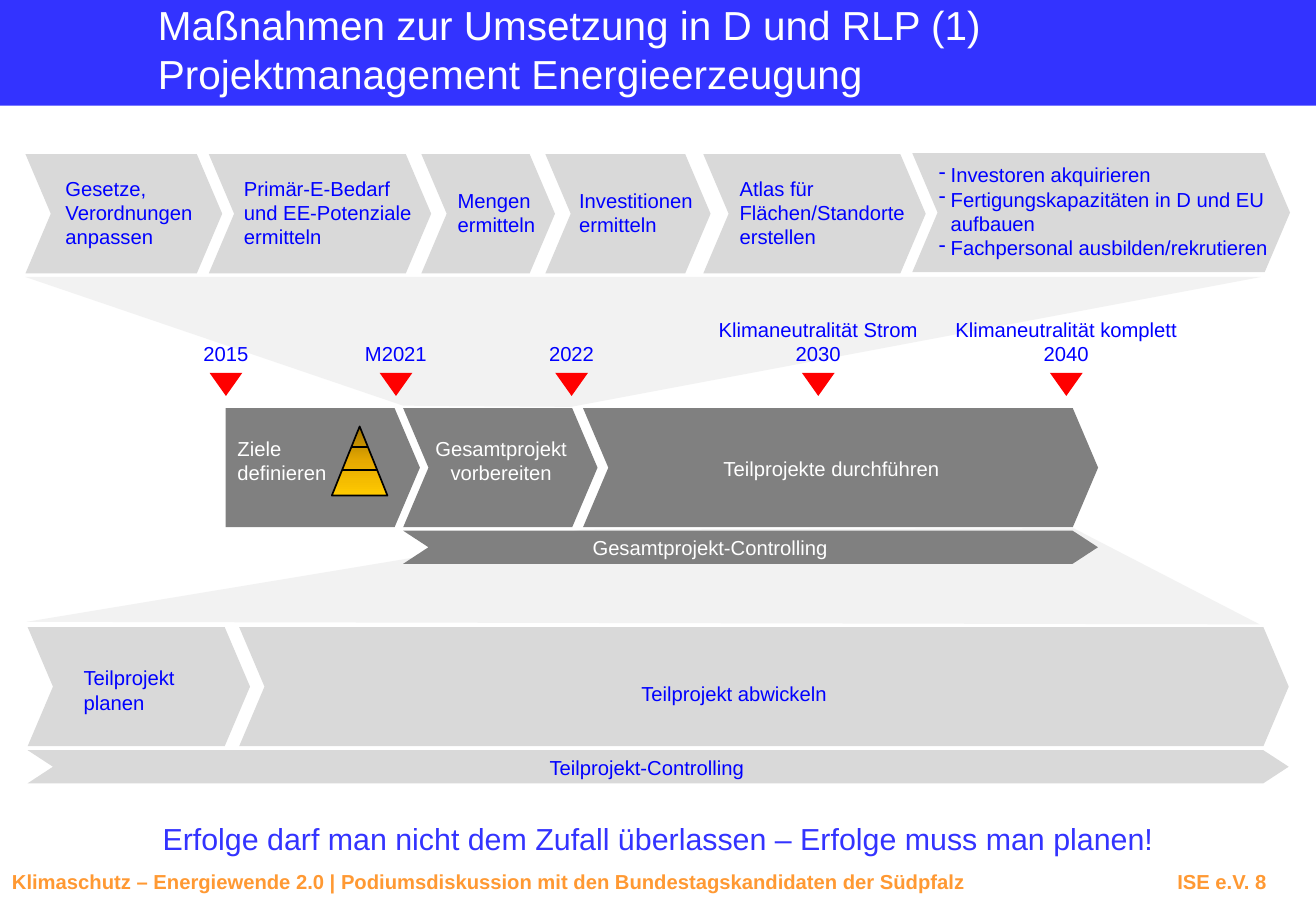
from copy import deepcopy

from lxml import etree
from pptx import Presentation
from pptx.dml.color import RGBColor
from pptx.enum.shapes import MSO_CONNECTOR, MSO_SHAPE
from pptx.enum.text import MSO_ANCHOR, MSO_AUTO_SIZE, PP_ALIGN
from pptx.oxml.ns import qn
from pptx.util import Pt

CHEVRON = MSO_SHAPE.CHEVRON
PENTAGON = MSO_SHAPE.PENTAGON
TRIANGLE = MSO_SHAPE.ISOSCELES_TRIANGLE
LEFT = PP_ALIGN.LEFT
CENTER = PP_ALIGN.CENTER

COLORS = {
    "band": "3333FF", "footer": "FF9933", "funnel": "F2F2F2",
    "light": "D9D9D9", "dark": "808080", "blue": "0000FF",
    "white": "FFFFFF", "marker": "FF0000", "black": "000000",
    "pyramid_top": "A07400", "pyramid_middle": "E6A900", "pyramid_base": "FFCA00",
}
PHASE_HEIGHT = 70.6
BAR_HEIGHT = 19.6

PREPARATION = [
    (15.1, 116.6, 31.7, 92.2, "Gesetze,\nVerordnungen\nanpassen"),
    (123.8, 131.8, 137.5, 114.5, "Primär-E-Bedarf\nund EE-Potenziale\nermitteln"),
    (249.8, 79.2, 264.2, 61.2, "Mengen\nermitteln"),
    (323.3, 97.9, 336.2, 82.1, "Investitionen\nermitteln"),
    (416.9, 131.8, 431.3, 112.3, "Atlas für\nFlächen/Standorte\nerstellen"),
]
RESOURCES = [
    "Investoren akquirieren",
    "Fertigungskapazitäten in D und EU\vaufbauen",
    "Fachpersonal ausbilden/rekrutieren",
]
MILESTONES = [
    (133.9, "2015"),
    (234.7, "M2021"),
    (338.8, "2022"),
    (485, "Klimaneutralität Strom\n2030"),
    (632, "Klimaneutralität komplett\n2040"),
]


def color(name):
    return RGBColor.from_string(COLORS[name])


def label_height(text):
    return 14.4 * len(text.splitlines()) + 7.2


def paint(shape, fill):
    shape.shadow.inherit = False
    shape.fill.solid()
    shape.fill.fore_color.rgb = color(fill)
    shape.line.fill.background()


def format_text(frame, size, text_color, align=LEFT, bold=False):
    for paragraph in frame.paragraphs:
        paragraph.alignment = align
        paragraph.font.name = "Arial"
        paragraph.font.size = Pt(size)
        paragraph.font.bold = bold
        paragraph.font.color.rgb = color(text_color)


def add_label(slide, left, top, width, text, text_color="blue", align=LEFT, size=12, wrap=False):
    box = slide.shapes.add_textbox(Pt(left), Pt(top), Pt(width), Pt(label_height(text)))
    frame = box.text_frame
    frame.word_wrap = wrap
    frame.text = text
    format_text(frame, size, text_color, align)
    return frame


def add_arrow(slide, left, top, width, fill, kind=CHEVRON, height=PHASE_HEIGHT, point=15):
    arrow = slide.shapes.add_shape(kind, Pt(left), Pt(top), Pt(width), Pt(height))
    arrow.adjustments[0] = point / height
    paint(arrow, fill)


def add_funnel(slide, points):
    corners = [(Pt(x), Pt(y)) for x, y in points]
    builder = slide.shapes.build_freeform(*corners[0], scale=1)
    builder.add_line_segments(corners[1:], close=True)
    paint(builder.convert_to_shape(), "funnel")


def add_milestone(slide, center, text):
    add_label(slide, center - 80, 220.3 - label_height(text), 160, text, align=CENTER)
    marker = slide.shapes.add_shape(TRIANGLE, Pt(center - 9.7), Pt(221), Pt(19.4), Pt(13.7))
    marker.rotation = 180
    paint(marker, "marker")


def add_pyramid(slide):
    pyramid = slide.shapes.add_shape(TRIANGLE, Pt(196.7), Pt(252.8), Pt(33), Pt(41))
    pyramid.shadow.inherit = False
    pyramid.line.color.rgb = color("black")
    pyramid.line.width = Pt(1)
    pyramid.fill.gradient()
    pyramid.fill.gradient_angle = 270
    stops = pyramid.element.spPr.find(".//" + qn("a:gsLst"))
    stops.insert(1, deepcopy(stops[0]))
    names = ("pyramid_top", "pyramid_middle", "pyramid_base")
    for index, (stop, name) in enumerate(zip(pyramid.fill.gradient_stops, names)):
        stop.position = index / 2
        stop.color.rgb = color(name)
    for start, end, y in ((208.1, 218.2, 265), (203, 223.9, 278.6)):
        line = slide.shapes.add_connector(MSO_CONNECTOR.STRAIGHT, Pt(start), Pt(y), Pt(end), Pt(y))
        line.line.color.rgb = color("black")
        line.line.width = Pt(1)
        etree.SubElement(line.element.spPr, qn("a:effectLst"))


def add_title(slide):
    title = slide.shapes.title
    title.left, title.top, title.width, title.height = Pt(0), Pt(0), Pt(780), Pt(62.6)
    title.fill.solid()
    title.fill.fore_color.rgb = color("band")
    frame = title.text_frame
    frame.auto_size = MSO_AUTO_SIZE.NONE
    frame.vertical_anchor = MSO_ANCHOR.TOP
    frame.margin_left = Pt(93.6)
    frame.margin_top = frame.margin_right = frame.margin_bottom = 0
    frame.text = "Maßnahmen zur Umsetzung in D und RLP (1)\nProjektmanagement Energieerzeugung"
    format_text(frame, 24, "white")


def add_resources(slide):
    add_arrow(slide, 540.7, 90.7, 223.9, "light")
    frame = add_label(slide, 549.4, 92.9, 215.3, "\n".join(RESOURCES), wrap=True)
    for paragraph in frame.paragraphs:
        properties = paragraph._p.get_or_add_pPr()
        properties.set("marL", str(Pt(7)))
        properties.set("indent", str(-Pt(7)))
        bullet = etree.Element(qn("a:buChar"), char="-")
        properties.insert(0, bullet)


def add_footer(slide):
    text = ("Klimaschutz – Energiewende 2.0 | Podiumsdiskussion mit den "
            "Bundestagskandidaten der Südpfalz\tISE e.V. 8")
    frame = add_label(slide, 0, 511.9, 780, text, wrap=True)
    tabs = etree.Element(qn("a:tabLst"))
    etree.SubElement(tabs, qn("a:tab"), pos=str(Pt(743.6)), algn="r")
    frame.paragraphs[0]._p.get_or_add_pPr().insert(0, tabs)
    format_text(frame, 12, "footer", bold=True)


def main():
    presentation = Presentation()
    presentation.slide_width = Pt(780)
    presentation.slide_height = Pt(540)
    slide = presentation.slides.add_slide(presentation.slide_layouts[5])
    add_title(slide)

    add_funnel(slide, [(15.1, 164.2), (747.4, 164.2), (338.4, 241.2), (239, 240.5)])
    add_funnel(slide, [(15.8, 368.6), (746.6, 370.1), (636.5, 313.2), (345.6, 313.9)])

    for left, width, label_left, label_width, text in PREPARATION:
        add_arrow(slide, left, 91.4, width, "light")
        add_label(slide, label_left, 126 - label_height(text) / 2, label_width, text)
    add_resources(slide)

    for center, text in MILESTONES:
        add_milestone(slide, center, text)

    add_arrow(slide, 133.7, 241.9, 115.2, "dark", kind=PENTAGON)
    add_label(slide, 133.7, 254.9, 67.7, "Ziele\ndefinieren", "white")
    add_pyramid(slide)
    add_arrow(slide, 239, 241.9, 115.2, "dark")
    add_label(slide, 250.6, 254.9, 92.9, "Gesamtprojekt\nvorbereiten", "white", CENTER)
    add_arrow(slide, 345.6, 241.9, 305.3, "dark")
    add_label(slide, 421.2, 267.1, 143.3, "Teilprojekte durchführen", "white", CENTER)
    add_arrow(slide, 239, 314.6, 411.8, "dark", height=BAR_HEIGHT)
    add_label(slide, 340.6, 313.9, 160.6, "Gesamtprojekt-Controlling", "white", CENTER)

    add_arrow(slide, 16.4, 371.7, 131.8, "light")
    add_label(slide, 42.5, 391, 69.1, "Teilprojekt\nplanen")
    add_arrow(slide, 141.8, 371.7, 622.1, "light")
    add_label(slide, 373, 400.3, 128.9, "Teilprojekt abwickeln")
    add_arrow(slide, 16.4, 444.7, 747.4, "light", height=BAR_HEIGHT)
    add_label(slide, 237.6, 444.2, 291.6, "Teilprojekt-Controlling", align=CENTER)

    add_label(slide, 0, 482.4, 780,
              "Erfolge darf man nicht dem Zufall überlassen – Erfolge muss man planen!",
              "band", CENTER, 18, True)
    add_footer(slide)
    presentation.save("out.pptx")


if __name__ == "__main__":
    main()
